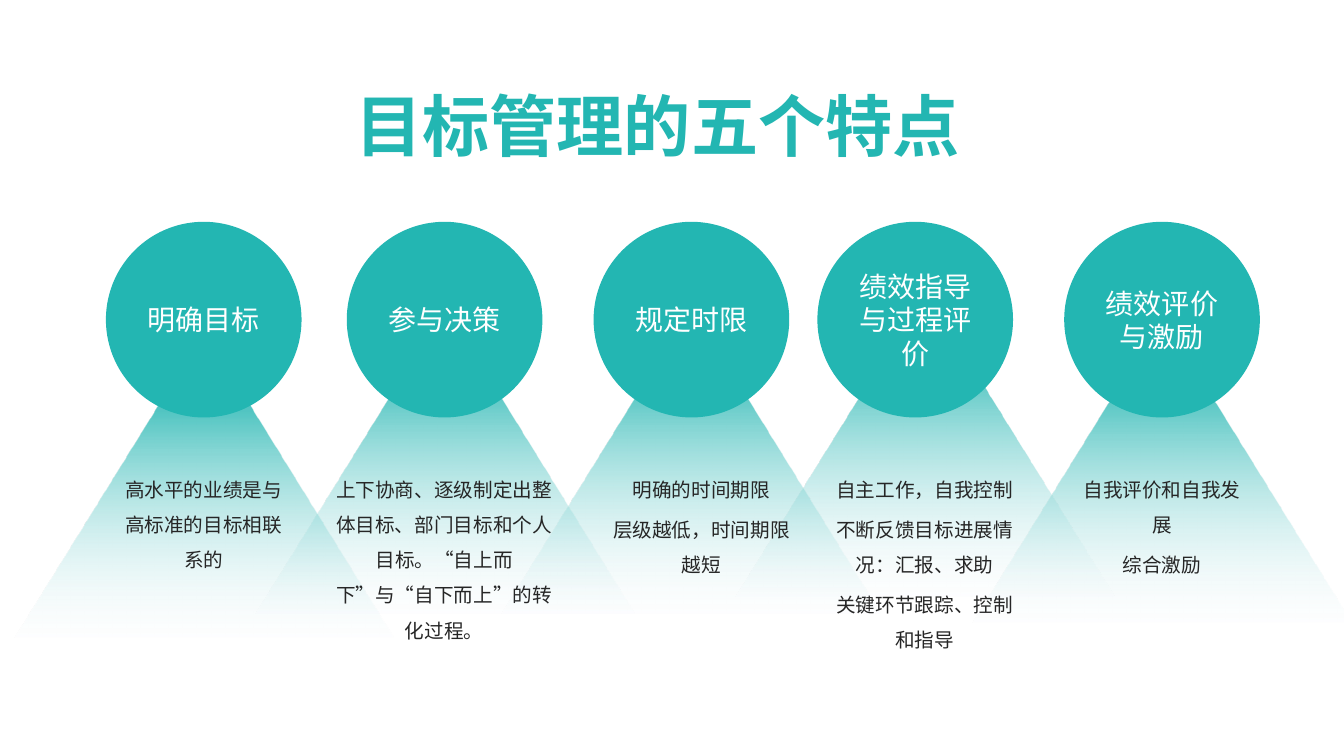
from dataclasses import dataclass

from lxml.etree import SubElement
from pptx import Presentation
from pptx.dml.color import RGBColor
from pptx.enum.lang import MSO_LANGUAGE_ID
from pptx.enum.shapes import MSO_SHAPE
from pptx.enum.text import MSO_ANCHOR, MSO_AUTO_SIZE, PP_ALIGN
from pptx.oxml.ns import qn
from pptx.util import Cm, Pt


@dataclass(frozen=True)
class Theme:
    """Colours, fonts and type sizes of the slide."""

    teal: RGBColor = RGBColor(0x23, 0xB6, 0xB2)
    mist: RGBColor = RGBColor(0xF7, 0xFA, 0xFD)
    white: RGBColor = RGBColor(0xFF, 0xFF, 0xFF)
    ink: RGBColor = RGBColor(0x26, 0x26, 0x26)
    title_font: str = "Arial"
    body_font: str = "Noto Sans CJK SC"
    title_size: Pt = Pt(48)
    label_size: Pt = Pt(20)
    body_size: Pt = Pt(14)


@dataclass(frozen=True)
class Feature:
    """One circle with its beam of light and description, lengths in cm."""

    label: str
    left: float
    beam_left: float
    beam_top: float
    note_left: float
    note_width: float
    note_height: float
    notes: tuple


THEME = Theme()
CIRCLE_TOP, CIRCLE_SIZE = 5.59, 4.93
BEAM_WIDTH, BEAM_HEIGHT = 9.55, 7.7
NOTE_TOP = 11.61
FEATURES = (
    Feature("明确目标", 2.67, 0.36, 8.36, 2.67, 4.93, 2.95,
            ("高水平的业绩是与高标准的目标相联系的",)),
    Feature("参与决策", 8.74, 6.43, 7.75, 8.2, 5.99, 3.84,
            ("上下协商、逐级制定出整体目标、部门目标和个人目标。“自上而下”与“自下而上”的转化过程。",)),
    Feature("规定时限", 14.96, 12.65, 7.75, 14.96, 5.44, 3.1,
            ("明确的时间期限", "层级越低，时间期限越短")),
    Feature("绩效指导与过程评价", 20.6, 18.54, 7.34, 20.6, 5.41, 5.03,
            ("自主工作，自我控制", "不断反馈目标进展情况：汇报、求助", "关键环节跟踪、控制和指导")),
    Feature("绩效评价与激励", 26.82, 24.51, 7.98, 26.82, 4.93, 3.1,
            ("自我评价和自我发展", "综合激励")),
)


def write_text(para, text, *, size, color, font=THEME.body_font, bold=False, spacing=None, before=None):
    """Write one centred paragraph in the given format."""
    para.alignment = PP_ALIGN.CENTER
    para.line_spacing = spacing
    para.space_before = before
    span = para.add_run()
    span.text = text
    span.font.size = size
    span.font.bold = bold
    span.font.name = font
    span.font.color.rgb = color
    span.font.language_id = MSO_LANGUAGE_ID.SIMPLIFIED_CHINESE
    SubElement(span.font._element, qn("a:ea")).set("typeface", font)


def add_plain_shape(page, kind, left, top, width, height):
    """Add a preset shape without line or shadow."""
    shape = page.shapes.add_shape(kind, Cm(left), Cm(top), Cm(width), Cm(height))
    shape.shadow.inherit = False
    shape.line.fill.background()
    return shape


def add_beam(page, feature):
    """Add the triangle of light that fades out downwards."""
    beam = add_plain_shape(page, MSO_SHAPE.ISOSCELES_TRIANGLE, feature.beam_left,
                           feature.beam_top, BEAM_WIDTH, BEAM_HEIGHT)
    beam.fill.gradient()
    beam.fill.gradient_angle = 90
    looks = ((0, THEME.mist, 12), (0.74, THEME.teal, 78))
    for stop, (position, color, opacity) in zip(beam.fill.gradient_stops, looks):
        stop.position = position
        stop.color.rgb = color
    for tone, look in zip(beam._element.spPr.iter(qn("a:srgbClr")), looks):
        SubElement(tone, qn("a:alpha")).set("val", str(look[2] * 1000))


def add_circle(page, feature):
    """Add the teal circle with the name of the feature."""
    circle = add_plain_shape(page, MSO_SHAPE.OVAL, feature.left, CIRCLE_TOP,
                             CIRCLE_SIZE, CIRCLE_SIZE)
    circle.fill.solid()
    circle.fill.fore_color.rgb = THEME.teal
    frame = circle.text_frame
    frame.word_wrap = True
    frame.vertical_anchor = MSO_ANCHOR.MIDDLE
    write_text(frame.paragraphs[0], feature.label, size=THEME.label_size, color=THEME.white)


def add_text_box(page, left, top, width, height):
    """Add a wrapping text box that grows with its text and return its frame."""
    box = page.shapes.add_textbox(Cm(left), Cm(top), Cm(width), Cm(height))
    box.text_frame.word_wrap = True
    box.text_frame.auto_size = MSO_AUTO_SIZE.SHAPE_TO_FIT_TEXT
    return box.text_frame


def add_notes(page, feature):
    """Add the description below the circle."""
    frame = add_text_box(page, feature.note_left, NOTE_TOP, feature.note_width, feature.note_height)
    for index, note in enumerate(feature.notes):
        para = frame.add_paragraph() if index else frame.paragraphs[0]
        write_text(para, note, size=THEME.body_size, color=THEME.ink, spacing=1.5,
                   before=Pt(3.5) if index else None)


def main():
    """Build the slide and save it."""
    deck = Presentation()
    deck.slide_width, deck.slide_height = Cm(33.87), Cm(19.05)
    page = deck.slides.add_slide(deck.slide_layouts[6])
    for feature in reversed(FEATURES):
        add_beam(page, feature)
    title = add_text_box(page, 7.59, 2.01, 17.96, 2.31)
    write_text(title.paragraphs[0], "目标管理的五个特点", size=THEME.title_size,
               color=THEME.teal, font=THEME.title_font, bold=True)
    for feature in FEATURES:
        add_circle(page, feature)
    for feature in FEATURES:
        add_notes(page, feature)
    deck.save("out.pptx")


if __name__ == "__main__":
    main()
